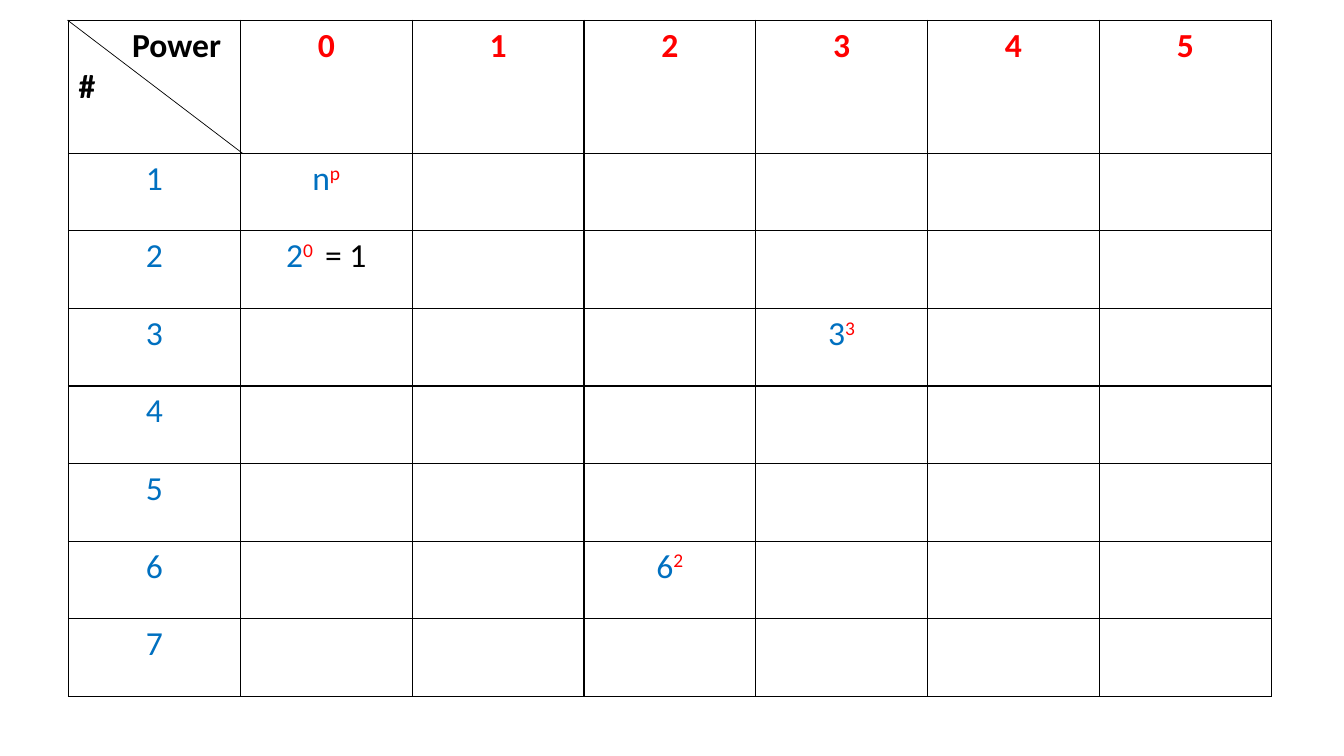
"""Build a slide with a grid of numbers raised to powers."""
from lxml.etree import SubElement
from pptx import Presentation
from pptx.dml.color import RGBColor
from pptx.enum.shapes import MSO_CONNECTOR
from pptx.enum.text import PP_ALIGN
from pptx.oxml.ns import qn
from pptx.util import Inches, Pt

COLORS = {"number": "0070C0", "power": "FF0000", "ink": "000000", "paper": "FFFFFF"}
FONT = "Calibri"
POWERS = ["0", "1", "2", "3", "4", "5"]
NUMBERS = ["1", "2", "3", "4", "5", "6", "7"]
EXAMPLES = {
    (1, 1): ("n", "p", ""),
    (2, 1): ("2", "0 ", " = 1"),
    (3, 4): ("3", "3", ""),
    (6, 3): ("6", "2", ""),
}
LEFT, TOP, WIDTH = 0.68, 0.2, 11.93
HEADER_H, ROW_H = 1.32, 0.77
POWER_INDENT = 0.53
BORDER = Pt(1)


def add_run(p, text, color, bold=False, raised=False):
    """Append one formatted run to a paragraph."""
    r = p.add_run()
    r.text = text
    r.font.size = Pt(24)
    r.font.name = FONT
    r.font.bold = bold
    r.font.color.rgb = RGBColor.from_string(COLORS[color])
    if raised:
        r.font._element.set("baseline", "30000")


def style_cell(cell):
    """Give a cell a thin border on each side and a plain fill."""
    tcPr = cell._tc.get_or_add_tcPr()
    for side in ("lnL", "lnR", "lnT", "lnB"):
        ln = SubElement(tcPr, qn(f"a:{side}"), w=str(BORDER))
        fill = SubElement(ln, qn("a:solidFill"))
        SubElement(fill, qn("a:srgbClr"), val=COLORS["ink"])
    cell.fill.solid()
    cell.fill.fore_color.rgb = RGBColor.from_string(COLORS["paper"])


def centered(cell):
    """Return the cell's first paragraph, centred."""
    p = cell.text_frame.paragraphs[0]
    p.alignment = PP_ALIGN.CENTER
    return p


def add_power_table(slide):
    """Add the table with its headings and worked examples."""
    rows, cols = len(NUMBERS) + 1, len(POWERS) + 1
    height = HEADER_H + ROW_H * len(NUMBERS)
    table = slide.shapes.add_table(
        rows, cols, Inches(LEFT), Inches(TOP), Inches(WIDTH), Inches(height)
    ).table
    table.first_row = table.horz_banding = False
    for col in table.columns:
        col.width = Inches(WIDTH / cols)
    for i, row in enumerate(table.rows):
        row.height = Inches(ROW_H if i else HEADER_H)
    for cell in table.iter_cells():
        style_cell(cell)

    tf = table.cell(0, 0).text_frame
    p = tf.paragraphs[0]
    p._p.get_or_add_pPr().set("marL", str(Inches(POWER_INDENT)))
    add_run(p, "Power", "ink", bold=True)
    add_run(tf.add_paragraph(), "#", "ink", bold=True)

    for col, power in enumerate(POWERS, 1):
        add_run(centered(table.cell(0, col)), power, "power", bold=True)
    for row, number in enumerate(NUMBERS, 1):
        add_run(centered(table.cell(row, 0)), number, "number")
    for (row, col), (base, power, result) in EXAMPLES.items():
        p = centered(table.cell(row, col))
        add_run(p, base, "number")
        add_run(p, power, "power", raised=True)
        if result:
            add_run(p, result, "ink")


def add_corner_line(slide):
    """Split the corner cell with a diagonal line."""
    right = LEFT + WIDTH / (len(POWERS) + 1) + 0.02
    line = slide.shapes.add_connector(
        MSO_CONNECTOR.STRAIGHT, Inches(LEFT - 0.01), Inches(TOP),
        Inches(right), Inches(TOP + HEADER_H),
    )
    line.line.color.rgb = RGBColor.from_string(COLORS["ink"])
    line.line.width = Pt(0.5)
    SubElement(line._element.spPr, qn("a:effectLst"))


def main():
    """Create and save the presentation."""
    prs = Presentation()
    prs.slide_width, prs.slide_height = Inches(13.33), Inches(7.5)
    slide = prs.slides.add_slide(prs.slide_layouts[6])
    add_power_table(slide)
    add_corner_line(slide)
    prs.save("out.pptx")


if __name__ == "__main__":
    main()
